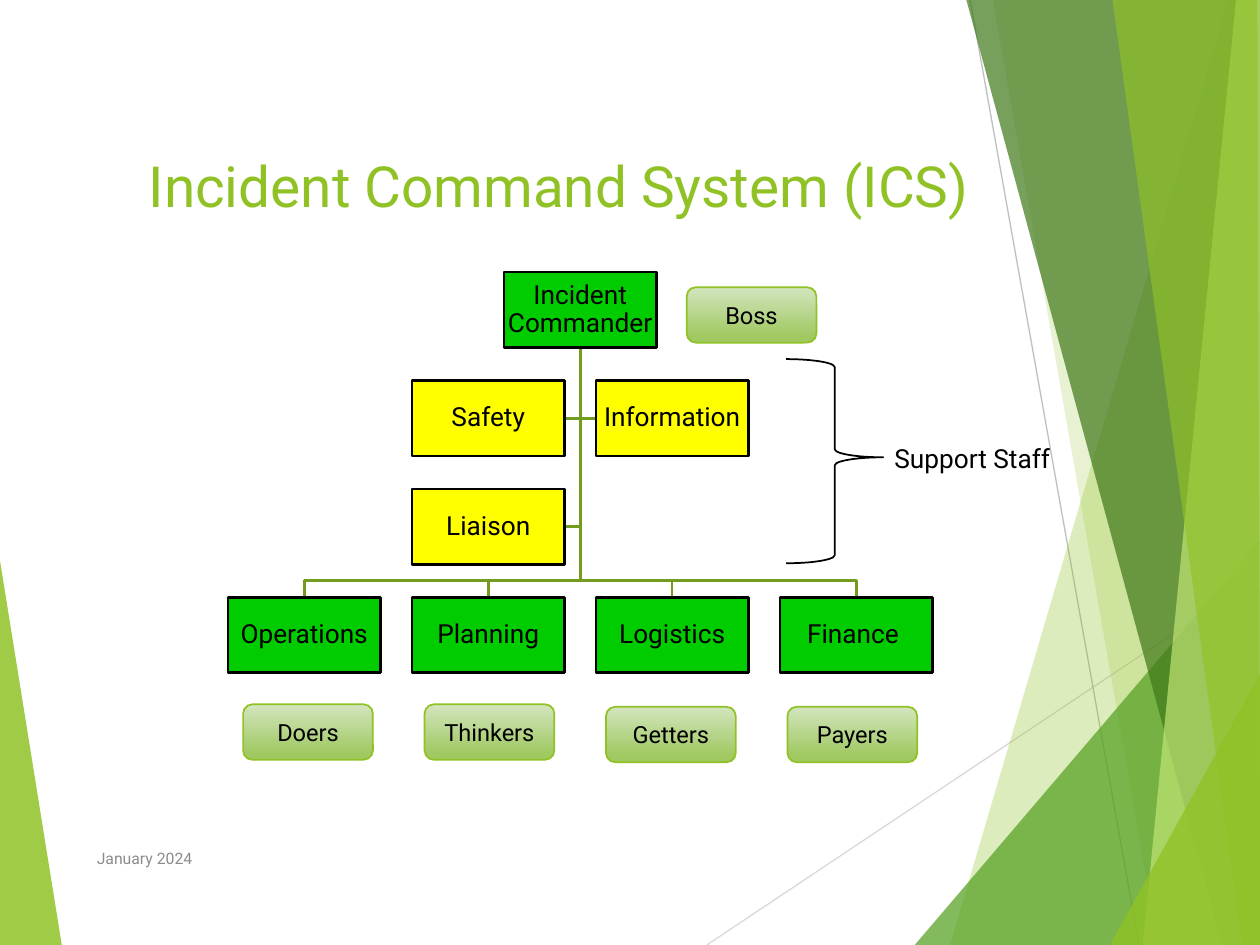
import lxml.etree
import pptx
import pptx.dml.color
import pptx.enum.dml
import pptx.enum.shapes
import pptx.enum.text
import pptx.oxml.ns
import pptx.util

Inches = pptx.util.Inches
Pt = pptx.util.Pt
RGBColor = pptx.dml.color.RGBColor
SHAPE = pptx.enum.shapes.MSO_SHAPE
ANCHOR = pptx.enum.text.MSO_ANCHOR
ALIGN = pptx.enum.text.PP_ALIGN
qn = pptx.oxml.ns.qn

FONT = "Roboto"
LIME = RGBColor(0x90, 0xC2, 0x26)
LEAF = RGBColor(0x54, 0xA0, 0x21)
FOREST = RGBColor(0x3F, 0x78, 0x19)
PALE_LIME = RGBColor(0xC0, 0xE4, 0x74)
BRANCH = RGBColor(0x73, 0x9B, 0x1E)
COMMAND_GREEN = RGBColor(0x00, 0xCC, 0x00)
STAFF_YELLOW = RGBColor(0xFF, 0xFF, 0x00)
TAG_TOP = RGBColor(0xD3, 0xE5, 0xBE)
TAG_BOTTOM = RGBColor(0xA0, 0xC9, 0x62)
BLACK = RGBColor(0x00, 0x00, 0x00)
GREY = RGBColor(0x8C, 0x8C, 0x8C)
RAY_LIGHT = RGBColor(0xD9, 0xD9, 0xD9)
RAY_DARK = RGBColor(0xBF, 0xBF, 0xBF)

# Organisation chart grid
BOX_WIDTH, BOX_HEIGHT = 1.21, 0.6
GRID_LEFT, GRID_TOP = 1.81, 2.16
COLUMN_STEP, ROW_STEP = 1.46, 0.86
TRUNK_X = GRID_LEFT + 1.5 * COLUMN_STEP + BOX_WIDTH / 2
TRUNK_TOP = GRID_TOP + BOX_HEIGHT
BUS_Y = 4.61


class SlideBuilder:
    def __init__(self, slide):
        self.slide = slide

    def set_text(self, shape, text, size, color=BLACK, align=ALIGN.LEFT,
                 anchor=ANCHOR.MIDDLE):
        frame = shape.text_frame
        frame.word_wrap = True
        frame.vertical_anchor = anchor
        paragraph = frame.paragraphs[0]
        paragraph.alignment = align
        run = paragraph.add_run()
        run.text = text
        run.font.name = FONT
        run.font.size = Pt(size)
        run.font.color.rgb = color
        return frame

    def title(self, text, left, top, width, height):
        shape = self.slide.shapes.title
        shape.left, shape.top = Inches(left), Inches(top)
        shape.width, shape.height = Inches(width), Inches(height)
        self.set_text(shape, text, 32.4, LIME, anchor=ANCHOR.TOP)

    def label(self, text, left, top, width, height, size, color, anchor):
        shape = self.slide.shapes.add_textbox(
            Inches(left), Inches(top), Inches(width), Inches(height))
        self.set_text(shape, text, size, color, anchor=anchor).margin_right = 0

    def outline(self, points, closed):
        corners = [(Inches(x), Inches(y)) for x, y in points]
        builder = self.slide.shapes.build_freeform(*corners[0], scale=1.0)
        builder.add_line_segments(corners[1:], close=closed)
        shape = builder.convert_to_shape()
        shape.shadow.inherit = False
        return shape

    def facet(self, points, color, opacity):
        shape = self.outline(points, True)
        shape.line.fill.background()
        shape.fill.solid()
        shape.fill.fore_color.rgb = color
        color_node = shape._element.xpath("./p:spPr/a:solidFill/a:srgbClr")[0]
        lxml.etree.SubElement(color_node, qn("a:alpha"), val=str(opacity * 1000))

    def ray(self, start, end, color):
        line = self.slide.shapes.add_connector(
            pptx.enum.shapes.MSO_CONNECTOR.STRAIGHT,
            *(Inches(value) for value in start + end))
        line.line.color.rgb = color
        line.line.width = Pt(0.75)
        lxml.etree.SubElement(line._element.spPr, qn("a:effectLst"))

    def branch(self, points):
        shape = self.outline(points, False)
        shape.fill.background()
        shape.line.color.rgb = BRANCH
        shape.line.width = Pt(1.5)

    def preset(self, kind, left, top, width, height, line_color, line_width):
        shape = self.slide.shapes.add_shape(
            kind, Inches(left), Inches(top), Inches(width), Inches(height))
        shape.shadow.inherit = False
        shape.line.color.rgb = line_color
        shape.line.width = Pt(line_width)
        return shape

    def role(self, text, column, row, color):
        shape = self.preset(
            SHAPE.RECTANGLE, GRID_LEFT + column * COLUMN_STEP,
            GRID_TOP + row * ROW_STEP, BOX_WIDTH, BOX_HEIGHT, BLACK, 1.5)
        shape.fill.solid()
        shape.fill.fore_color.rgb = color
        frame = self.set_text(shape, text, 15, align=ALIGN.CENTER)
        frame.margin_left = frame.margin_right = Inches(0.01)
        frame.margin_top = frame.margin_bottom = Inches(0.01)
        frame.paragraphs[0].line_spacing = 0.9

    def tag(self, text, left, top):
        shape = self.preset(SHAPE.ROUNDED_RECTANGLE, left, top, 1.03, 0.44, LIME, 1)
        shape.fill.gradient()
        shape.fill.gradient_angle = 270
        stops = zip(shape.fill.gradient_stops, (0, 0.88), (TAG_TOP, TAG_BOTTOM))
        for stop, position, color in stops:
            stop.position = position
            stop.color.rgb = color
        self.set_text(shape, text, 13.5, align=ALIGN.CENTER)

    def brace(self, left, top, width, height):
        shape = self.preset(SHAPE.LEFT_BRACE, left, top, width, height, BLACK, 1)
        shape.fill.background()
        shape.rotation = 180
        shape.adjustments[0] = 0.083
        shape.adjustments[1] = 0.519


def main():
    presentation = pptx.Presentation()
    presentation.slide_width, presentation.slide_height = Inches(10), Inches(7.5)
    builder = SlideBuilder(presentation.slides.add_slide(presentation.slide_layouts[5]))

    # Background facets and rays
    builder.facet([(0, 4.45), (0.49, 7.5), (0, 7.5)], LIME, 85)
    builder.ray((5.61, 7.5), (10, 4.57), RAY_LIGHT)
    builder.ray((7.7, 0), (9.04, 7.5), RAY_DARK)
    for points, color, opacity in [
        ([(9.75, 0), (7.54, 7.5), (10, 7.5), (10, 0)], LIME, 30),
        ([(7.88, 0), (9.19, 7.5), (10, 7.5), (10, 0)], LIME, 20),
        ([(7.26, 7.5), (10, 4.29), (10, 7.5)], LEAF, 72),
        ([(7.67, 0), (9.7, 7.5), (10, 7.5), (10, 0)], FOREST, 70),
        ([(9.81, 0), (9.07, 7.5), (10, 7.5), (10, 0)], PALE_LIME, 70),
        ([(8.83, 0), (9.86, 7.5), (10, 7.5), (9.98, 0)], LIME, 65),
        ([(8.81, 7.5), (10, 5.35), (10, 7.5)], LIME, 80),
    ]:
        builder.facet(points, color, opacity)

    builder.title("Incident Command System (ICS)", 1.08, 1.15, 7.05, 1.08)

    # Branches from the commander to the staff and the sections
    staff = [("Safety", 1, 1), ("Information", 2, 1), ("Liaison", 1, 2)]
    sections = ["Operations", "Planning", "Logistics", "Finance "]
    trunk_start = (TRUNK_X, TRUNK_TOP)
    for _, column, row in staff:
        y = GRID_TOP + row * ROW_STEP + BOX_HEIGHT / 2
        side = 0.13 if column == 2 else -0.13
        builder.branch([trunk_start, (TRUNK_X, y), (TRUNK_X + side, y)])
    for column in range(len(sections)):
        x = GRID_LEFT + column * COLUMN_STEP + BOX_WIDTH / 2
        builder.branch([trunk_start, (TRUNK_X, BUS_Y), (x, BUS_Y),
                        (x, GRID_TOP + 3 * ROW_STEP)])

    # Role boxes
    builder.role("Incident Commander", 1.5, 0, COMMAND_GREEN)
    for column, name in enumerate(sections):
        builder.role(name, column, 3, COMMAND_GREEN)
    for name, column, row in staff:
        builder.role(name, column, row, STAFF_YELLOW)

    # Plain-word tags
    for index, name in enumerate(["Doers", "Thinkers", "Getters", "Payers"]):
        builder.tag(name, 1.93 + 1.44 * index, 5.59 if index < 2 else 5.61)
    builder.tag("Boss", 5.45, 2.28)

    # Support staff bracket and date
    builder.brace(6.24, 2.85, 0.77, 1.62)
    builder.label("Support Staff", 7, 3.46, 1.45, 0.35, 15, BLACK, ANCHOR.TOP)
    builder.label("January 2024", 0.67, 6.61, 5.06, 0.4, 9, GREY, ANCHOR.MIDDLE)

    presentation.save("out.pptx")


if __name__ == "__main__":
    main()
